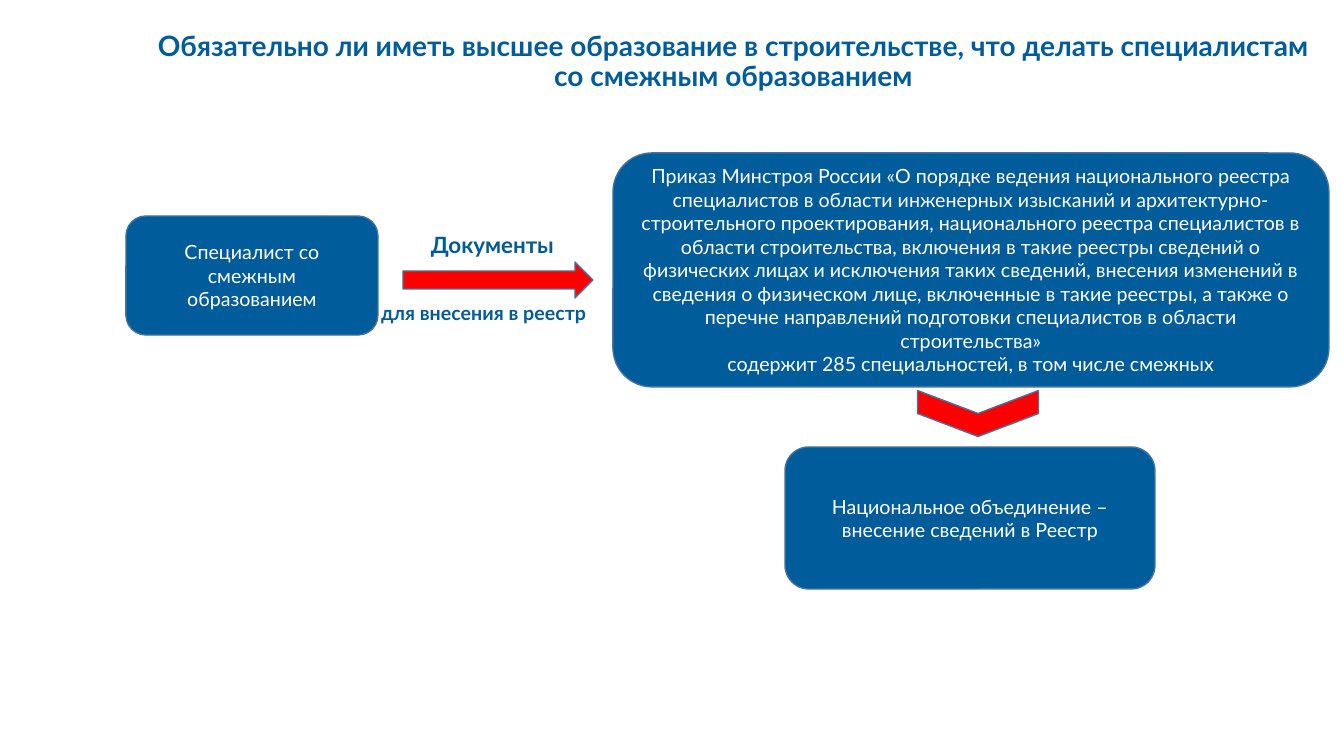
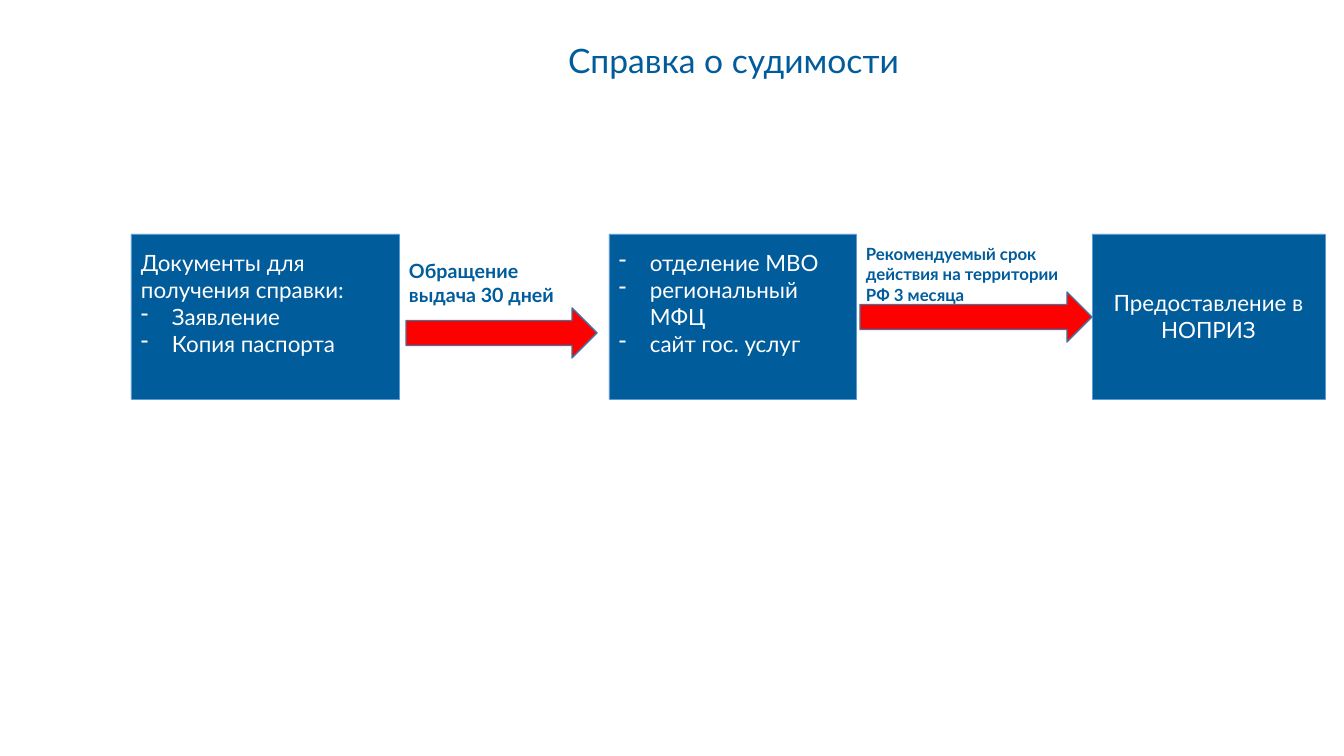
import dataclasses

import lxml.etree
import pptx
import pptx.dml.color
import pptx.enum.shapes
import pptx.enum.text
import pptx.oxml.ns
import pptx.util

SHAPES = pptx.enum.shapes.MSO_SHAPE
ALIGN = pptx.enum.text.PP_ALIGN
ANCHOR = pptx.enum.text.MSO_ANCHOR


@dataclasses.dataclass(frozen=True)
class Theme:
    font: str = "Lato"
    blue: str = "005C9B"
    red: str = "FF0000"
    white: str = "FFFFFF"
    outline: str = "43739E"
    light_outline: str = "5B9BD5"
    title: int = 20
    short_title: int = 24
    large: int = 16
    body: int = 14
    small: int = 12


THEME = Theme()
EMU_PER_PX = 914400 / 100.8
SLIDE_SIZE = (1344, 756)
TITLE_AREA = (143, 14, 1181, 97)
INSET_X, INSET_Y = 10, 5
BULLET_INDENT = 31
LIST_BOTTOM_INSET = 32
STEP_TOP, STEP_HEIGHT = 234, 165

EDUCATION = {
    "title": (
        "Обязательно ли иметь высшее образование в строительстве, "
        "что делать специалистам со смежным образованием",
        THEME.title, True,
    ),
    "boxes": [
        ((126, 216, 252, 119), ["Специалист со смежным образованием"]),
        ((613, 153, 716, 234), [
            "Приказ Минстроя России «О порядке ведения национального реестра "
            "специалистов в области инженерных изысканий и "
            "архитектурно-строительного проектирования, национального реестра "
            "специалистов в области строительства, включения в такие реестры "
            "сведений о физических лицах и исключения таких сведений, внесения "
            "изменений в сведения о физическом лице, включенные в такие реестры, "
            "а также о перечне направлений подготовки специалистов в области "
            "строительства»",
            "содержит 285 специальностей, в том числе смежных",
        ]),
        ((785, 447, 370, 142), ["Национальное объединение – внесение сведений в Реестр"]),
    ],
    "arrows": [
        (SHAPES.RIGHT_ARROW, (403, 262, 190, 36), 0),
        (SHAPES.CHEVRON, (955, 353, 46, 121), 90),
    ],
    "labels": [
        ((421, 226, 150, 37), ["Документы"], THEME.large),
        ((371, 296, 253, 34), ["для внесения в реестр"], THEME.body),
    ],
}

CERTIFICATE = {
    "title": ("Справка о судимости", THEME.short_title, False),
    "steps": [
        (131, 268, ["Документы для получения справки:"], ["Заявление", "Копия паспорта"]),
        (609, 247, [], ["отделение МВО", "региональный МФЦ", "сайт гос. услуг"]),
        (1092, 233, ["Предоставление в НОПРИЗ"], []),
    ],
    "arrows": [
        (SHAPES.RIGHT_ARROW, (406, 308, 191, 50), 0),
        (SHAPES.RIGHT_ARROW, (860, 292, 232, 50), 0),
    ],
    "labels": [
        ((399, 254, 176, 57), ["Обращение", "выдача 30 дней"], THEME.body),
        ((856, 239, 236, 72), ["Рекомендуемый срок действия на территории РФ 3 месяца"], THEME.small),
    ],
}


def px(value):
    return pptx.util.Emu(round(value * EMU_PER_PX))


def rgb(value):
    return pptx.dml.color.RGBColor.from_string(value)


def add_bullet(paragraph):
    properties = paragraph._p.get_or_add_pPr()
    properties.set("marL", str(px(BULLET_INDENT)))
    properties.set("indent", str(-px(BULLET_INDENT)))
    bullet = lxml.etree.SubElement(properties, pptx.oxml.ns.qn("a:buChar"))
    bullet.set("char", "-")


def write(shape, lines, size, color, align=ALIGN.CENTER, anchor=ANCHOR.MIDDLE,
          bold=False, bullets=(), spacing=None, bottom=INSET_Y):
    frame = shape.text_frame
    frame.word_wrap = True
    frame.vertical_anchor = anchor
    frame.margin_left = frame.margin_right = px(INSET_X)
    frame.margin_top, frame.margin_bottom = px(INSET_Y), px(bottom)
    for index, text in enumerate([*lines, *bullets]):
        paragraph = frame.add_paragraph() if index else frame.paragraphs[0]
        paragraph.alignment = align
        if spacing:
            paragraph.line_spacing = spacing
        if index >= len(lines):
            add_bullet(paragraph)
        run = paragraph.add_run()
        run.text = text
        run.font.name = THEME.font
        run.font.size = pptx.util.Pt(size)
        run.font.bold = bold
        run.font.color.rgb = rgb(color)


def add_filled(slide, kind, area, fill, outline=THEME.outline, width=1):
    shape = slide.shapes.add_shape(kind, *map(px, area))
    shape.shadow.inherit = False
    shape.fill.solid()
    shape.fill.fore_color.rgb = rgb(fill)
    shape.line.color.rgb = rgb(outline)
    shape.line.width = pptx.util.Pt(width)
    return shape


def add_text(slide, area, lines, size, **style):
    write(slide.shapes.add_textbox(*map(px, area)), lines, size, THEME.blue, **style)


def add_step(slide, left, width, lines, bullets):
    area = (left, STEP_TOP, width, STEP_HEIGHT)
    shape = add_filled(slide, SHAPES.RECTANGLE, area, THEME.blue, THEME.light_outline, 0.5)
    write(shape, lines, THEME.large, THEME.white, bullets=bullets,
          align=ALIGN.LEFT if bullets else ALIGN.CENTER,
          bottom=LIST_BOTTOM_INSET if bullets else INSET_Y)


def add_slide(presentation, content):
    slide = presentation.slides.add_slide(presentation.slide_layouts[6])
    title, size, bold = content["title"]
    add_text(slide, TITLE_AREA, [title], size, bold=bold, spacing=0.9)
    for area, lines in content.get("boxes", []):
        box = add_filled(slide, SHAPES.ROUNDED_RECTANGLE, area, THEME.blue)
        write(box, lines, THEME.body, THEME.white)
    for step in content.get("steps", []):
        add_step(slide, *step)
    for kind, area, rotation in content["arrows"]:
        add_filled(slide, kind, area, THEME.red).rotation = rotation
    for area, lines, size in content["labels"]:
        add_text(slide, area, lines, size, align=ALIGN.LEFT, anchor=ANCHOR.TOP, bold=True)


def main():
    presentation = pptx.Presentation()
    presentation.slide_width, presentation.slide_height = map(px, SLIDE_SIZE)
    for content in (EDUCATION, CERTIFICATE):
        add_slide(presentation, content)
    presentation.save("out.pptx")


if __name__ == "__main__":
    main()
